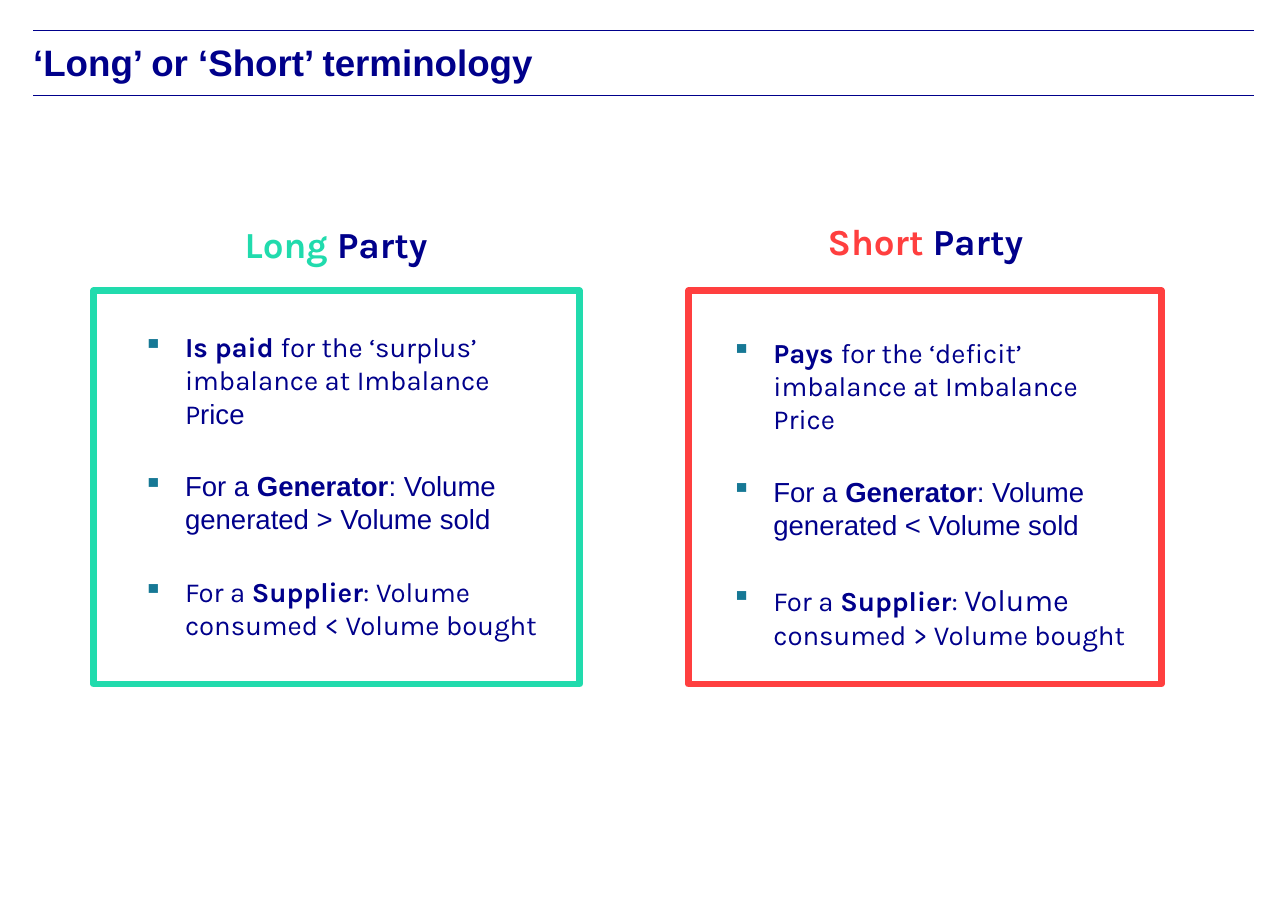
from lxml import etree
from pptx import Presentation
from pptx.dml.color import RGBColor
from pptx.enum.shapes import MSO_CONNECTOR, MSO_SHAPE
from pptx.enum.text import MSO_ANCHOR, PP_ALIGN
from pptx.oxml.ns import qn
from pptx.util import Inches, Pt

LINE = MSO_CONNECTOR.STRAIGHT
RECT = MSO_SHAPE.RECTANGLE
TOP, MIDDLE = MSO_ANCHOR.TOP, MSO_ANCHOR.MIDDLE
LEFT, CENTER = PP_ALIGN.LEFT, PP_ALIGN.CENTER
NAVY, TEAL, GREEN, RED = "00008B", "167895", "21DBAD", "FF3F3F"
SANS, KARLA = "Arial", "Karla"


def paint(code):
    return RGBColor.from_string(code)


def write(para, text, size, face, bold=False, tint=NAVY):
    run = para.add_run()
    run.text = text
    run.font.size = Pt(size)
    run.font.name = face
    run.font.bold = bold
    run.font.color.rgb = paint(tint)


deck = Presentation()
deck.slide_width, deck.slide_height = Inches(11.69), Inches(8.27)
col, row = deck.slide_width / 100, deck.slide_height / 100
slide = deck.slides.add_slide(deck.slide_layouts[5])
shapes = slide.shapes
edge, span = int(2.57 * col), int(94.78 * col)

for y in (3.39, 10.52):
    rule = shapes.add_connector(LINE, edge, int(y * row), edge + span, int(y * row))
    rule.line.color.rgb = paint(NAVY)
    rule.line.width = Pt(0.5)
    etree.SubElement(rule._element.spPr, qn("a:effectLst"))

title = shapes.title
title.left, title.top = edge, int(3.99 * row)
title.width, title.height = span, int(6.53 * row)
frame = title.text_frame
frame.margin_left = frame.margin_right = frame.margin_bottom = 0
frame.margin_top = Inches(0.03)
frame.vertical_anchor = TOP
frame.paragraphs[0].alignment = LEFT
write(frame.paragraphs[0], "‘Long’ or ‘Short’ terminology", 24, SANS, True)

sides = [
    ("Long", GREEN, (12.49, 24.43), (7.27, 37.72), (9.5, 35.67, 33.11, 35.67), [
        [("Is paid ", 18, KARLA, True),
         ("for the ‘surplus’ imbalance at Imbalance P", 18, KARLA),
         ("rice", 18, SANS)],
        [("For a ", 18, SANS), ("Generator", 18, SANS, True),
         (": Volume generated > Volume sold", 18, SANS)],
        [("For a ", 18, KARLA), ("Supplier", 18, KARLA, True),
         (": Volume consumed < Volume bought", 18, KARLA)],
    ]),
    ("Short", RED, (58.25, 24.06), (53.46, 36.7), (55.18, 36.28, 33.36, 35.91), [
        [("Pays ", 18, KARLA, True),
         ("for the ‘deficit’ imbalance at Imbalance Price", 18, KARLA)],
        [("For a ", 18, SANS), ("Generator", 18, SANS, True),
         (": Volume generated < Volume sold", 18, SANS)],
        [("For a ", 18, KARLA), ("Supplier", 18, KARLA, True),
         (": ", 18, KARLA), ("Volume", 20, KARLA),
         (" consumed > Volume bought", 18, KARLA)],
    ]),
]

for name, tint, (hx, hy), (bx, bw), (x, y, w, h), points in sides:
    body = shapes.add_textbox(int(x * col), int(y * row), int(w * col), int(h * row))
    frame = body.text_frame
    frame.word_wrap = True
    for i, point in enumerate(points):
        para = frame.add_paragraph() if i else frame.paragraphs[0]
        para.level = 1
        props = para._p.get_or_add_pPr()
        props.set("marL", str(Inches(0.47)))
        props.set("indent", str(Inches(-0.38)))
        hue = etree.SubElement(props, qn("a:buClr"))
        etree.SubElement(hue, qn("a:srgbClr"), val=TEAL)
        etree.SubElement(props, qn("a:buChar"), char="▪")
        para.space_before = Pt(24 if i else 0)
        para.space_after = Pt(2)
        for part in point:
            write(para, *part)

    box = shapes.add_shape(RECT, int(bx * col), int(31.92 * row),
                           int(bw * col), int(43.17 * row))
    box.shadow.inherit = False
    box.fill.background()
    box.line.color.rgb = paint(tint)
    box.line.width = Pt(4.5)

    head = shapes.add_shape(MSO_SHAPE.ROUNDED_RECTANGLE, int(hx * col), int(hy * row),
                            int(27.2 * col), int(4.72 * row))
    head.adjustments[0] = 0
    head.shadow.inherit = False
    head.fill.background()
    head.line.fill.background()
    frame = head.text_frame
    frame.margin_left = frame.margin_right = Inches(0.12)
    frame.margin_top = frame.margin_bottom = 0
    frame.vertical_anchor = MIDDLE
    para = frame.paragraphs[0]
    para.alignment = CENTER
    write(para, name, 24, KARLA, True, tint)
    write(para, " Party", 24, KARLA, True)

deck.save("out.pptx")
